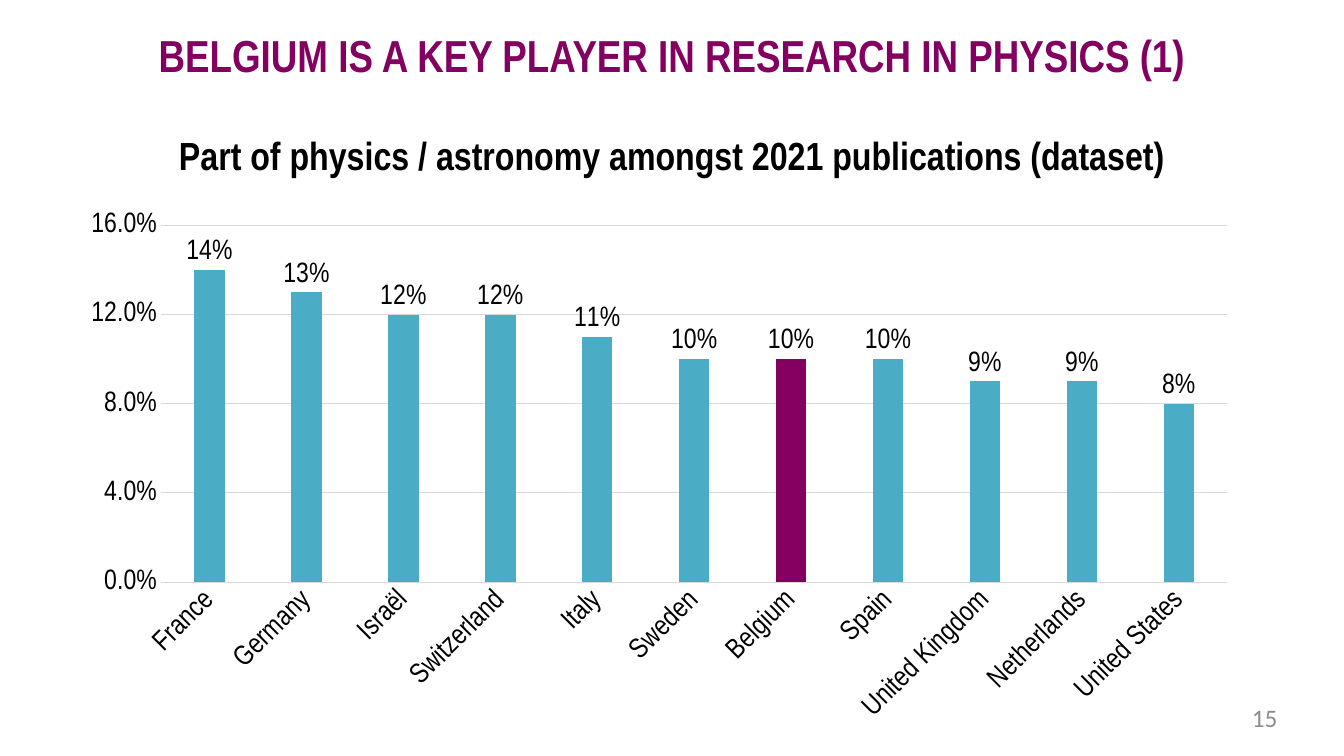
from lxml import etree
from pptx import Presentation
from pptx import util as u
from pptx.chart import data as chart_data
from pptx.dml.color import RGBColor
from pptx.enum import chart as ch
from pptx.enum import text
from pptx.oxml import ns

PURPLE = RGBColor(0x84, 0x00, 0x60)
TEAL = RGBColor(0x4B, 0xAC, 0xC6)
BLACK = RGBColor(0, 0, 0)
GREY = RGBColor(0x8C, 0x8C, 0x8C)
GRID = RGBColor(0xD9, 0xD9, 0xD9)
FONT = "Arial Narrow"

TITLE = "BELGIUM IS A KEY PLAYER IN RESEARCH IN PHYSICS (1)"
SUBTITLE = "Part of physics / astronomy amongst 2021 publications (dataset)"
PAGE_NUMBER = "15"
SHARES = {
    "France": 0.14, "Germany": 0.13, "Israël": 0.12, "Switzerland": 0.12,
    "Italy": 0.11, "Sweden": 0.10, "Belgium": 0.10, "Spain": 0.10,
    "United Kingdom": 0.09, "Netherlands": 0.09, "United States": 0.08,
}
HIGHLIGHT = "Belgium"

# Left, top, width, height in inches
TITLE_AREA = (0.42, 0.22, 12.5, 0.64)
SUBTITLE_AREA = (1.66, 1.25, 10, 0.57)
CHART_AREA = (0.67, 2, 11.75, 5.28)
PLOT_AREA = (1.6, 2.24, 10.58, 3.54)
NUMBER_AREA = (9.6, 6.97, 3.07, 0.38)


def inches(area):
    return [u.Inches(length) for length in area]


def style_font(font, size=20, color=BLACK, name=FONT, bold=False):
    font.size, font.name, font.bold = u.Pt(size), name, bold
    font.color.rgb = color


def write(box, words, area, align=text.PP_ALIGN.CENTER, inset=None, **font):
    box.left, box.top, box.width, box.height = inches(area)
    frame = box.text_frame
    frame.word_wrap = True
    frame.auto_size = text.MSO_AUTO_SIZE.NONE
    frame.vertical_anchor = text.MSO_ANCHOR.TOP
    if inset is not None:
        frame.margin_left = frame.margin_right = u.Inches(inset)
        frame.margin_top = frame.margin_bottom = u.Inches(inset)
    para = frame.paragraphs[0]
    para.alignment = align
    para.line_spacing = 1.0
    para.space_before = u.Pt(0)
    span = para.add_run()
    span.text = words
    style_font(span.font, **font)


def fix_plot_area(chart):
    plot_area = chart._chartSpace.find(".//" + ns.qn("c:plotArea"))
    for old in plot_area.findall(ns.qn("c:layout")):
        plot_area.remove(old)
    layout = etree.Element(ns.qn("c:layout"))
    manual = etree.SubElement(layout, ns.qn("c:manualLayout"))
    left, top, width, height = CHART_AREA
    settings = {
        "layoutTarget": "inner", "xMode": "edge", "yMode": "edge",
        "x": round((PLOT_AREA[0] - left) / width, 3),
        "y": round((PLOT_AREA[1] - top) / height, 3),
        "w": round(PLOT_AREA[2] / width, 3),
        "h": round(PLOT_AREA[3] / height, 3),
    }
    for tag, value in settings.items():
        etree.SubElement(manual, ns.qn("c:" + tag)).set("val", str(value))
    plot_area.insert(0, layout)


def add_share_chart(page):
    data = chart_data.CategoryChartData(number_format="0%")
    data.categories = list(SHARES)
    data.add_series("Series 1", list(SHARES.values()))
    chart = page.shapes.add_chart(
        ch.XL_CHART_TYPE.COLUMN_CLUSTERED, *inches(CHART_AREA), data).chart
    chart.has_legend = chart.has_title = False
    style_font(chart.font)
    fix_plot_area(chart)

    # Axes
    for axis in (chart.category_axis, chart.value_axis):
        axis.major_tick_mark = axis.minor_tick_mark = ch.XL_TICK_MARK.NONE
        style_font(axis.tick_labels.font)
    countries, shares = chart.category_axis, chart.value_axis
    countries.has_major_gridlines = False
    shares.has_major_gridlines = True
    for line in (countries.format.line, shares.major_gridlines.format.line):
        line.color.rgb = GRID
        line.width = u.Pt(0.75)
    slant = countries._element.find(ns.qn("c:txPr")).find(ns.qn("a:bodyPr"))
    slant.set("rot", str(-45 * 60000))
    slant.set("vert", "horz")
    shares.minimum_scale, shares.maximum_scale = 0, 0.16
    shares.major_unit = 0.04
    shares.format.line.fill.background()
    shares.tick_labels.number_format = "0.0%"
    shares.tick_labels.number_format_is_linked = False

    # Columns and labels
    plot = chart.plots[0]
    plot.gap_width, plot.overlap = 219, -27
    plot.vary_by_categories = False
    series = plot.series[0]
    series.invert_if_negative = False
    highlight = series.points[list(SHARES).index(HIGHLIGHT)]
    for part, color in ((series, TEAL), (highlight, PURPLE)):
        part.format.fill.solid()
        part.format.fill.fore_color.rgb = color
    labels = series.data_labels
    labels.show_value = True
    labels.position = ch.XL_LABEL_POSITION.OUTSIDE_END
    labels.number_format = "0%"
    labels.number_format_is_linked = False
    style_font(labels.font)


def main():
    deck = Presentation()
    deck.slide_width, deck.slide_height = u.Inches(13.33), u.Inches(7.5)
    page = deck.slides.add_slide(deck.slide_layouts[5])

    # Headings, chart and page number
    write(page.shapes.title, TITLE, TITLE_AREA, size=32, color=PURPLE, bold=True)
    add_share_chart(page)
    write(page.shapes.add_textbox(*inches(SUBTITLE_AREA)), SUBTITLE,
          SUBTITLE_AREA, size=28, bold=True)
    write(page.shapes.add_textbox(*inches(NUMBER_AREA)), PAGE_NUMBER,
          NUMBER_AREA, align=text.PP_ALIGN.RIGHT, inset=0,
          size=18, color=GREY, name="Calibri")

    deck.save("out.pptx")


if __name__ == "__main__":
    main()
